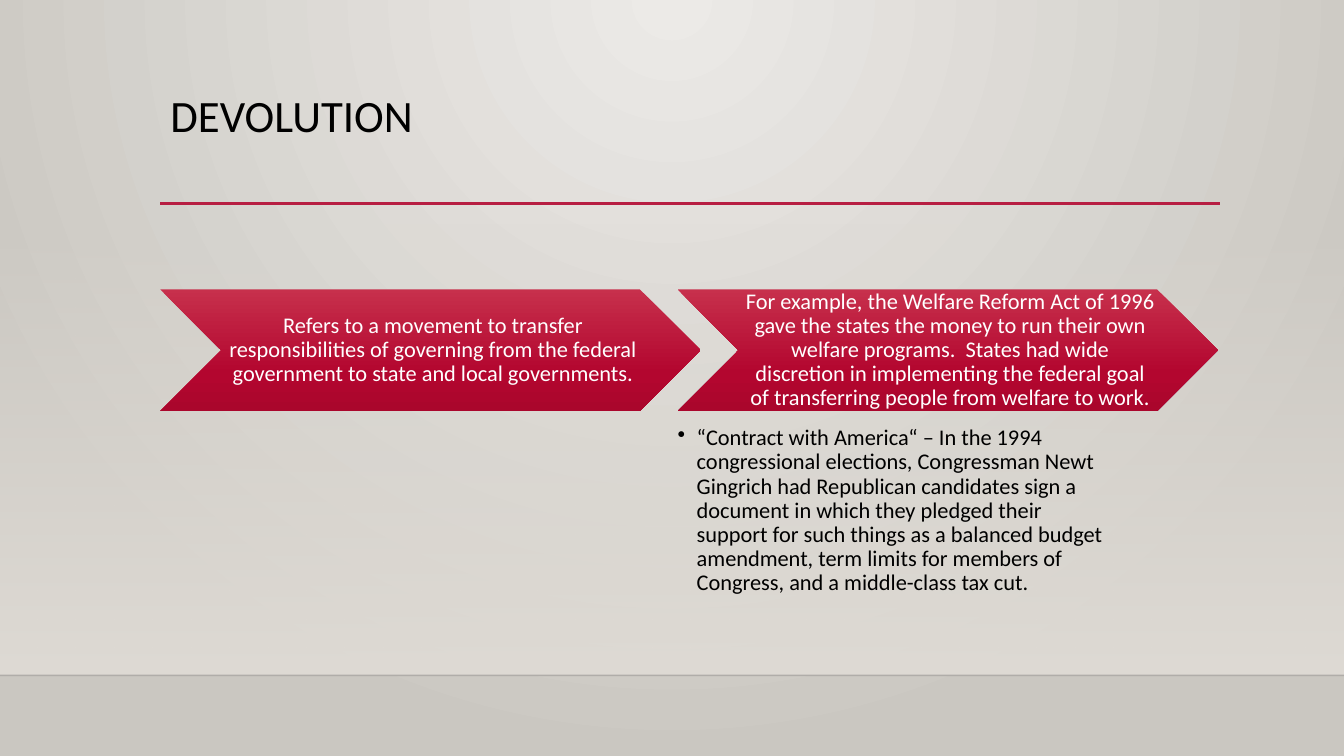
from pptx import Presentation
from pptx.dml.color import RGBColor
from pptx.enum.shapes import MSO_CONNECTOR, MSO_SHAPE
from pptx.enum.text import MSO_ANCHOR, MSO_AUTO_SIZE, PP_ALIGN
from pptx.oxml import parse_xml
from pptx.oxml.ns import nsdecls
from pptx.util import Inches, Pt

STRAIGHT = MSO_CONNECTOR.STRAIGHT
RECTANGLE, CHEVRON = MSO_SHAPE.RECTANGLE, MSO_SHAPE.CHEVRON
TOP, MIDDLE = MSO_ANCHOR.TOP, MSO_ANCHOR.MIDDLE
LEFT, CENTER = PP_ALIGN.LEFT, PP_ALIGN.CENTER
NO_AUTOFIT = MSO_AUTO_SIZE.NONE
LINEAR_DOWN = '<a:lin ang="5400000" scaled="0"/>'
RADIAL_FROM_TOP = ('<a:path path="circle">'
                   '<a:fillToRect l="43000" t="0" r="43000" b="100000"/></a:path>')


def fill_gradient(fill, element, stops, direction):
    """Fill with (percent, colour, opacity percent) stops."""
    fill.gradient()
    old = element.xpath(".//a:gradFill")[0]
    stop_list = "".join(
        f'<a:gs pos="{position * 1000}"><a:srgbClr val="{color}">'
        f'<a:alpha val="{opacity * 1000}"/></a:srgbClr></a:gs>'
        for position, color, opacity in stops)
    old.getparent().replace(old, parse_xml(
        f'<a:gradFill {nsdecls("a")} rotWithShape="1">'
        f'<a:gsLst>{stop_list}</a:gsLst>{direction}</a:gradFill>'))


def write(shape, text, size=16, color="000000", align=LEFT, anchor=TOP,
          insets=(0, 0, 0, 0), bullet_indent=None):
    frame = shape.text_frame
    frame.word_wrap = True
    frame.auto_size = NO_AUTOFIT
    frame.vertical_anchor = anchor
    frame.margin_left, frame.margin_top, frame.margin_right, frame.margin_bottom = map(
        Inches, insets)
    paragraph = frame.paragraphs[0]
    paragraph.text = text
    paragraph.alignment = align
    paragraph.line_spacing = 0.9
    paragraph.space_before = Pt(0)
    if bullet_indent:
        properties = paragraph._p.get_or_add_pPr()
        properties.set("marL", str(Inches(bullet_indent)))
        properties.set("indent", str(-Inches(bullet_indent)))
        properties.append(parse_xml(f'<a:buChar {nsdecls("a")} char="•"/>'))
    font = paragraph.runs[0].font
    font.name = "Calibri"
    font.size = Pt(size)
    font.color.rgb = RGBColor.from_string(color)


presentation = Presentation()
presentation.slide_width = Inches(13.33)
presentation.slide_height = Inches(7.5)
slide = presentation.slides.add_slide(presentation.slide_layouts[5])
shapes = slide.shapes

# Background: radial light from the top and a wall fading in above the floor
fill_gradient(slide.background.fill, slide._element,
              [(0, "ECEAE7", 100), (100, "CAC7C1", 100)], RADIAL_FROM_TOP)
wall = shapes.add_shape(RECTANGLE, 0, Inches(2.21), Inches(13.33), Inches(4.49))
wall.shadow.inherit = False
wall.line.fill.background()
fill_gradient(wall.fill, wall.element,
              [(0, "DFDBD5", 0), (100, "DFDBD5", 100)], LINEAR_DOWN)

# Floor edge and title rule
for left, right, y, color, width, opacity in [
    (0, 13.33, 6.7, "000001", 1, 20),
    (1.59, 12.1, 2.02, "B71E42", 2.5, 100),
]:
    rule = shapes.add_connector(STRAIGHT, Inches(left), Inches(y), Inches(right), Inches(y))
    rule.line.width = Pt(width)
    rule.line.color.rgb = RGBColor.from_string(color)
    rule.element.xpath(".//a:ln//a:srgbClr")[0].append(
        parse_xml(f'<a:alpha {nsdecls("a")} val="{opacity * 1000}"/>'))
    rule.element.spPr.append(parse_xml(f'<a:effectLst {nsdecls("a")}/>'))

# Title
title = shapes.title
title.left, title.top, title.width, title.height = map(Inches, (1.59, 0.88, 10.5, 1.15))
write(title, "DEVOLUTION", size=32, insets=(0.1, 0.05, 0.1, 0.05))

# Chevrons with their text
chevron_left, chevron_step, chevron_top, chevron_height = 1.59, 5.13, 2.87, 1.21
statements = [
    "Refers to a movement to transfer responsibilities of governing from the federal "
    "government to state and local governments.",
    "For example, the Welfare Reform Act of 1996 gave the states the money to run their "
    "own welfare programs.  States had wide discretion in implementing the federal goal "
    "of transferring people from welfare to work.",
]
for index, statement in enumerate(statements):
    left = chevron_left + index * chevron_step
    chevron = shapes.add_shape(CHEVRON, Inches(left), Inches(chevron_top),
                               Inches(5.36), Inches(chevron_height))
    chevron.shadow.inherit = False
    chevron.line.fill.background()
    fill_gradient(chevron.fill, chevron.element,
                  [(0, "C7304C", 100), (69, "B3062F", 100), (100, "AA062C", 100)],
                  LINEAR_DOWN)
    label = shapes.add_textbox(Inches(left + 0.6), Inches(chevron_top),
                               Inches(4.16), Inches(chevron_height))
    write(label, statement, color="FFFFFF", align=CENTER, anchor=MIDDLE,
          insets=(0.07, 0.02, 0.02, 0.02))

# Bullet under the second chevron
detail = shapes.add_textbox(Inches(chevron_left + chevron_step), Inches(4.23),
                            Inches(4.29), Inches(1.65))
write(detail,
      "“Contract with America“ – In the 1994 congressional elections, Congressman Newt "
      "Gingrich had Republican candidates sign a document in which they pledged their "
      "support for such things as a balanced budget amendment, term limits for members "
      "of Congress, and a middle-class tax cut.",
      bullet_indent=0.19)

presentation.save("out.pptx")
